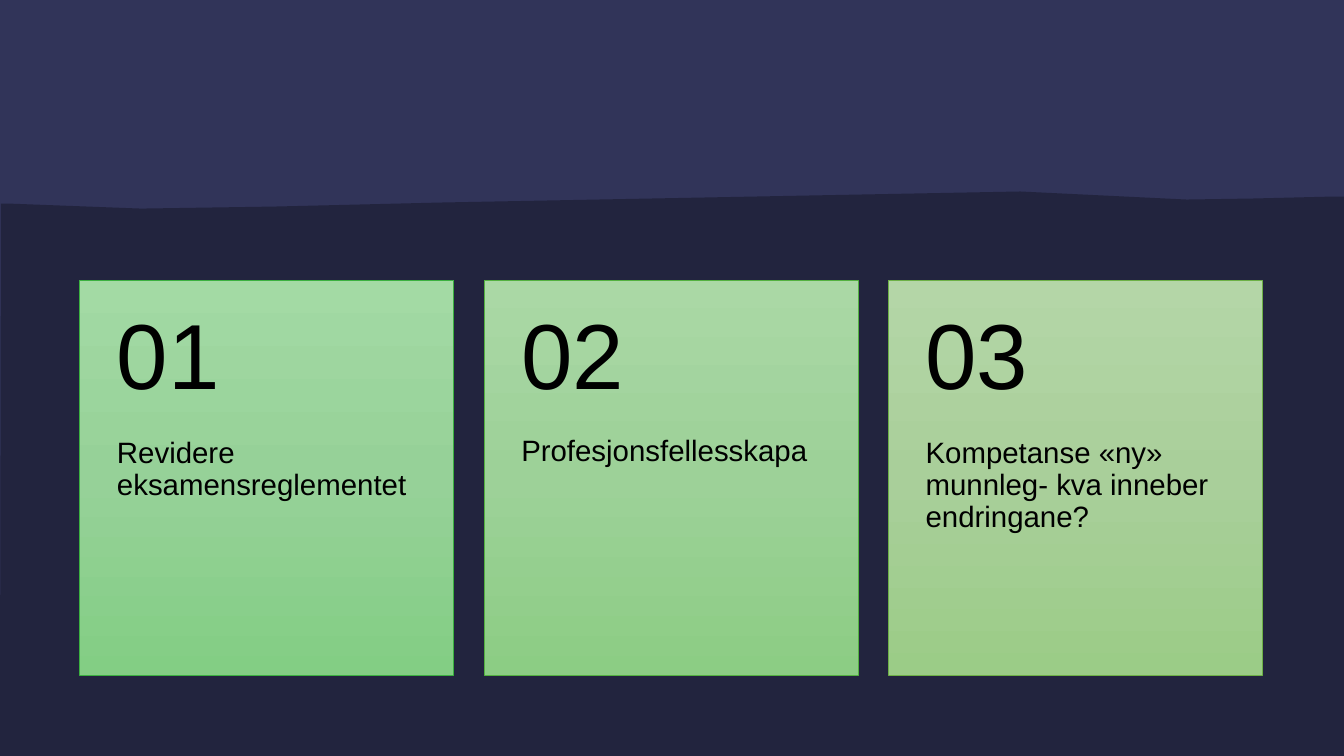
"""Build a slide with three numbered topic cards on a dark, torn-edge background."""
from copy import deepcopy
from dataclasses import dataclass

from pptx import Presentation
from pptx.dml.color import RGBColor
from pptx.enum.shapes import MSO_SHAPE
from pptx.enum.text import MSO_ANCHOR
from pptx.oxml.ns import qn
from pptx.shapes.autoshape import Shape
from pptx.shapes.shapetree import GroupShapes
from pptx.slide import Slide
from pptx.util import Inches, Pt

NIGHT = RGBColor(0x22, 0x24, 0x3E)
INDIGO = RGBColor(0x31, 0x34, 0x59)
BLACK = RGBColor(0x00, 0x00, 0x00)

SLIDE_WIDTH, SLIDE_HEIGHT = 13.33, 7.5
CARD_LEFT, CARD_TOP, CARD_PITCH = 0.79, 2.78, 4.01
CARD_WIDTH, CARD_HEIGHT = 3.71, 3.92
NUMBER_HEIGHT = 1.57
SIDE_INSET = 0.37

TORN_EDGE = [
    (0.01, 2.02), (0.08, 2.02), (1.4, 2.07), (2.72, 2.05), (3.54, 2.03),
    (4.36, 2.01), (10.12, 1.9), (11.77, 1.98), (12.43, 1.97), (13.23, 1.95),
    (SLIDE_WIDTH, 1.95),
]


@dataclass(frozen=True)
class Card:
    """A topic with its gradient colours from top to bottom."""
    topic: str
    gradient: tuple[RGBColor, RGBColor, RGBColor]
    border: RGBColor


CARDS = [
    Card("Revidere eksamensreglementet",
         (RGBColor(0xA3, 0xDA, 0xA4), RGBColor(0x96, 0xD1, 0x98), RGBColor(0x83, 0xCE, 0x84)),
         RGBColor(0x3B, 0xB1, 0x40)),
    Card("Profesjonsfellesskapa",
         (RGBColor(0xAA, 0xD8, 0xA5), RGBColor(0x9D, 0xD1, 0x98), RGBColor(0x8C, 0xCD, 0x84)),
         RGBColor(0x53, 0xB1, 0x40)),
    Card("Kompetanse «ny» munnleg- kva inneber endringane?",
         (RGBColor(0xB4, 0xD6, 0xA7), RGBColor(0xA9, 0xCF, 0x9A), RGBColor(0x9B, 0xCC, 0x87)),
         RGBColor(0x6D, 0xB1, 0x46)),
]


def fill_plain(shape: Shape, color: RGBColor) -> None:
    """Give a shape a solid fill without line or shadow."""
    shape.fill.solid()
    shape.fill.fore_color.rgb = color
    shape.line.fill.background()
    shape.shadow.inherit = False


def fill_gradient(shape: Shape, colors: tuple[RGBColor, ...]) -> None:
    """Fill a shape from top to bottom with evenly spaced colours."""
    shape.fill.gradient()
    shape.fill.gradient_angle = 270
    stop_list = next(shape._element.iter(qn("a:gsLst")))
    while len(stop_list) < len(colors):
        stop_list.append(deepcopy(stop_list[0]))
    for index, (stop, color) in enumerate(zip(shape.fill.gradient_stops, colors)):
        stop.position = index / (len(colors) - 1)
        stop.color.rgb = color


def draw_background(slide: Slide) -> None:
    """Draw the indigo sky and the dark ground with its torn edge."""
    slide.background.fill.solid()
    slide.background.fill.fore_color.rgb = NIGHT
    sky = slide.shapes.add_shape(
        MSO_SHAPE.RECTANGLE, 0, 0, Inches(SLIDE_WIDTH), Inches(SLIDE_HEIGHT))
    fill_plain(sky, INDIGO)
    outline = slide.shapes.build_freeform(0, Inches(SLIDE_HEIGHT))
    outline.add_line_segments(
        [(Inches(x), Inches(y)) for x, y in [*TORN_EDGE, (SLIDE_WIDTH, SLIDE_HEIGHT)]])
    fill_plain(outline.convert_to_shape(), NIGHT)


def add_text(shapes: GroupShapes, text: str, left: float, top: float, height: float,
             size: int, anchor: MSO_ANCHOR, inset_top: float, inset_bottom: float) -> None:
    """Add a card-wide text box."""
    box = shapes.add_textbox(Inches(left), Inches(top), Inches(CARD_WIDTH), Inches(height))
    frame = box.text_frame
    frame.word_wrap = True
    frame.vertical_anchor = anchor
    frame.margin_left = frame.margin_right = Inches(SIDE_INSET)
    frame.margin_top, frame.margin_bottom = Inches(inset_top), Inches(inset_bottom)
    paragraph = frame.paragraphs[0]
    paragraph.text = text
    paragraph.line_spacing = 0.9
    paragraph.font.name = "Arial"
    paragraph.font.size = Pt(size)
    paragraph.font.color.rgb = BLACK


def draw_card(shapes: GroupShapes, card: Card, number: int) -> None:
    """Draw one card with its number above its topic."""
    left = CARD_LEFT + (number - 1) * CARD_PITCH
    panel = shapes.add_shape(MSO_SHAPE.RECTANGLE, Inches(left), Inches(CARD_TOP),
                             Inches(CARD_WIDTH), Inches(CARD_HEIGHT))
    panel.shadow.inherit = False
    fill_gradient(panel, card.gradient)
    panel.line.color.rgb = card.border
    panel.line.width = Pt(0.5)
    add_text(shapes, card.topic, left, CARD_TOP + NUMBER_HEIGHT,
             CARD_HEIGHT - NUMBER_HEIGHT, 21, MSO_ANCHOR.TOP, 0, 0.36)
    add_text(shapes, f"{number:02}", left, CARD_TOP, NUMBER_HEIGHT,
             66, MSO_ANCHOR.MIDDLE, 0.18, 0.18)


def main() -> None:
    """Build and save the presentation."""
    presentation = Presentation()
    presentation.slide_width = Inches(SLIDE_WIDTH)
    presentation.slide_height = Inches(SLIDE_HEIGHT)
    slide = presentation.slides.add_slide(presentation.slide_layouts[6])
    draw_background(slide)
    card_row = slide.shapes.add_group_shape()
    for number, card in enumerate(CARDS, start=1):
        draw_card(card_row.shapes, card, number)
    presentation.save("out.pptx")


if __name__ == "__main__":
    main()
